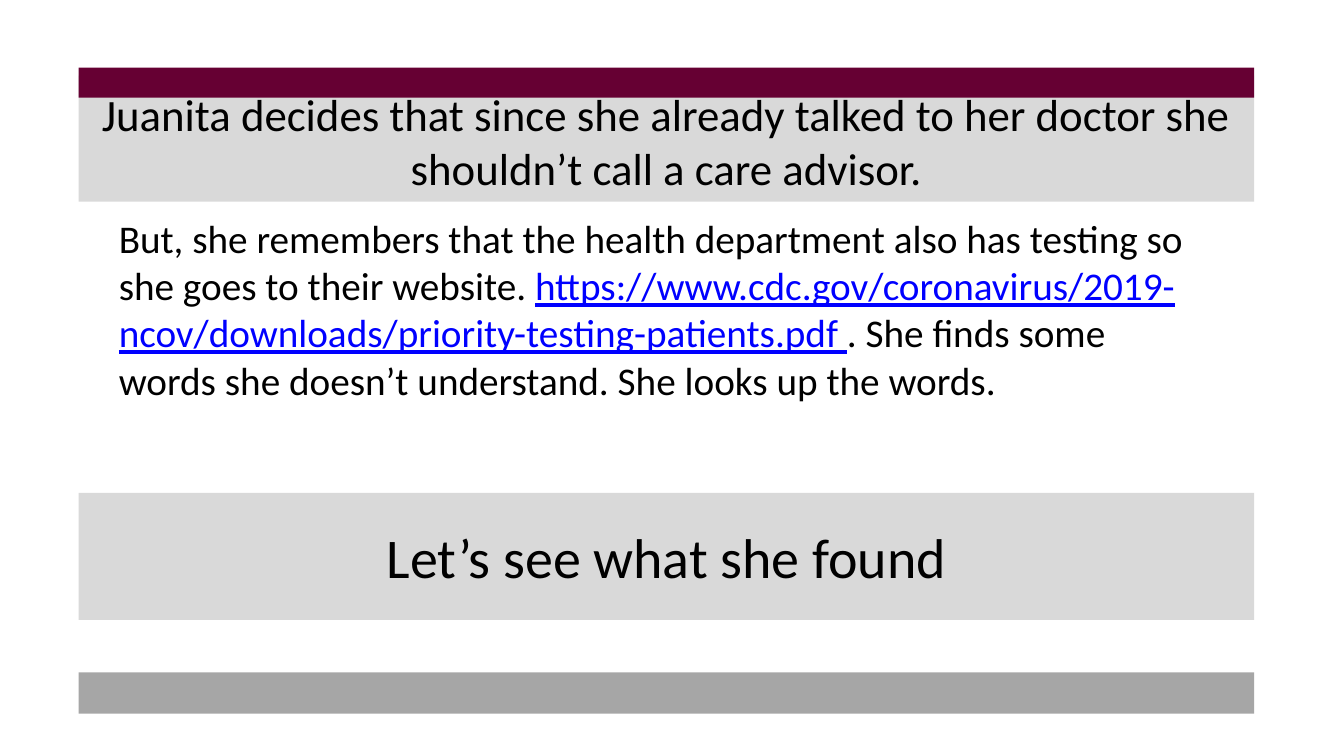
from dataclasses import dataclass

import pptx
import pptx.dml.color
import pptx.enum.shapes
import pptx.enum.text
import pptx.util
from pptx.util import Inches


@dataclass(frozen=True)
class Theme:
    font: str = "Calibri"
    ink: str = "000000"
    link: str = "0000FF"
    maroon: str = "660033"
    pale_grey: str = "D9D9D9"
    mid_grey: str = "A6A6A6"
    title_size: int = 32
    body_size: int = 28
    prompt_size: int = 40


@dataclass(frozen=True)
class Band:
    top: float
    height: float
    colour: str


THEME = Theme()
LEFT, WIDTH = 0.78, 11.66
PROMPT_BAND = Band(4.89, 1.26, THEME.pale_grey)
TITLE_BAND = Band(0.75, 1.25, THEME.pale_grey)
FOOTER_BAND = Band(6.67, 0.41, THEME.mid_grey)
HEADER_BAND = Band(0.67, 0.3, THEME.maroon)


def rgb(colour: str) -> pptx.dml.color.RGBColor:
    return pptx.dml.color.RGBColor.from_string(colour)


def add_band(slide, band: Band):
    """Draw one full-width band without outline."""
    bar = slide.shapes.add_shape(
        pptx.enum.shapes.MSO_SHAPE.RECTANGLE,
        Inches(LEFT), Inches(band.top), Inches(WIDTH), Inches(band.height))
    bar.shadow.inherit = False
    bar.fill.solid()
    bar.fill.fore_color.rgb = rgb(band.colour)
    bar.line.fill.background()
    return bar


def style_font(paragraph, size: int) -> None:
    paragraph.font.name = THEME.font
    paragraph.font.size = pptx.util.Pt(size)
    paragraph.font.color.rgb = rgb(THEME.ink)


def write_centred(shape, text: str, size: int) -> None:
    frame = shape.text_frame
    frame.text = text
    frame.word_wrap = True
    frame.vertical_anchor = pptx.enum.text.MSO_ANCHOR.MIDDLE
    paragraph = frame.paragraphs[0]
    paragraph.alignment = pptx.enum.text.PP_ALIGN.CENTER
    style_font(paragraph, size)


def add_story(slide) -> None:
    """Write the body paragraph with its underlined web address."""
    story = slide.shapes.add_textbox(
        Inches(1.08), Inches(2.08), Inches(11.03), Inches(1.99))
    frame = story.text_frame
    frame.word_wrap = True
    frame.auto_size = pptx.enum.text.MSO_AUTO_SIZE.SHAPE_TO_FIT_TEXT
    paragraph = frame.paragraphs[0]
    style_font(paragraph, THEME.body_size)
    paragraph.add_run().text = (
        "But, she remembers that the health department also has testing so "
        "she goes to their website. ")
    address = paragraph.add_run()
    address.text = ("https://www.cdc.gov/coronavirus/2019-ncov/downloads/"
                    "priority-testing-patients.pdf ")
    address.font.color.rgb = rgb(THEME.link)
    address.font.underline = True
    paragraph.add_run().text = (
        ". She finds some words she doesn’t understand. "
        "She looks up the words.")


def main() -> None:
    deck = pptx.Presentation()
    deck.slide_width, deck.slide_height = Inches(13.33), Inches(7.5)
    slide = deck.slides.add_slide(deck.slide_layouts.get_by_name("Title Only"))

    # Grey bands behind the text
    prompt = add_band(slide, PROMPT_BAND)
    write_centred(prompt, "Let’s see what she found", THEME.prompt_size)
    add_band(slide, TITLE_BAND)
    footer = add_band(slide, FOOTER_BAND)

    # Title, raised above its band
    title = slide.shapes.title
    title.left, title.top = Inches(LEFT), Inches(HEADER_BAND.top)
    title.width, title.height = Inches(WIDTH), Inches(1.45)
    write_centred(
        title,
        "Juanita decides that since she already talked to her doctor she "
        "shouldn’t call a care advisor.",
        THEME.title_size)
    footer.element.addnext(title.element)

    # Header band and body
    add_band(slide, HEADER_BAND)
    add_story(slide)

    deck.save("out.pptx")


if __name__ == "__main__":
    main()
